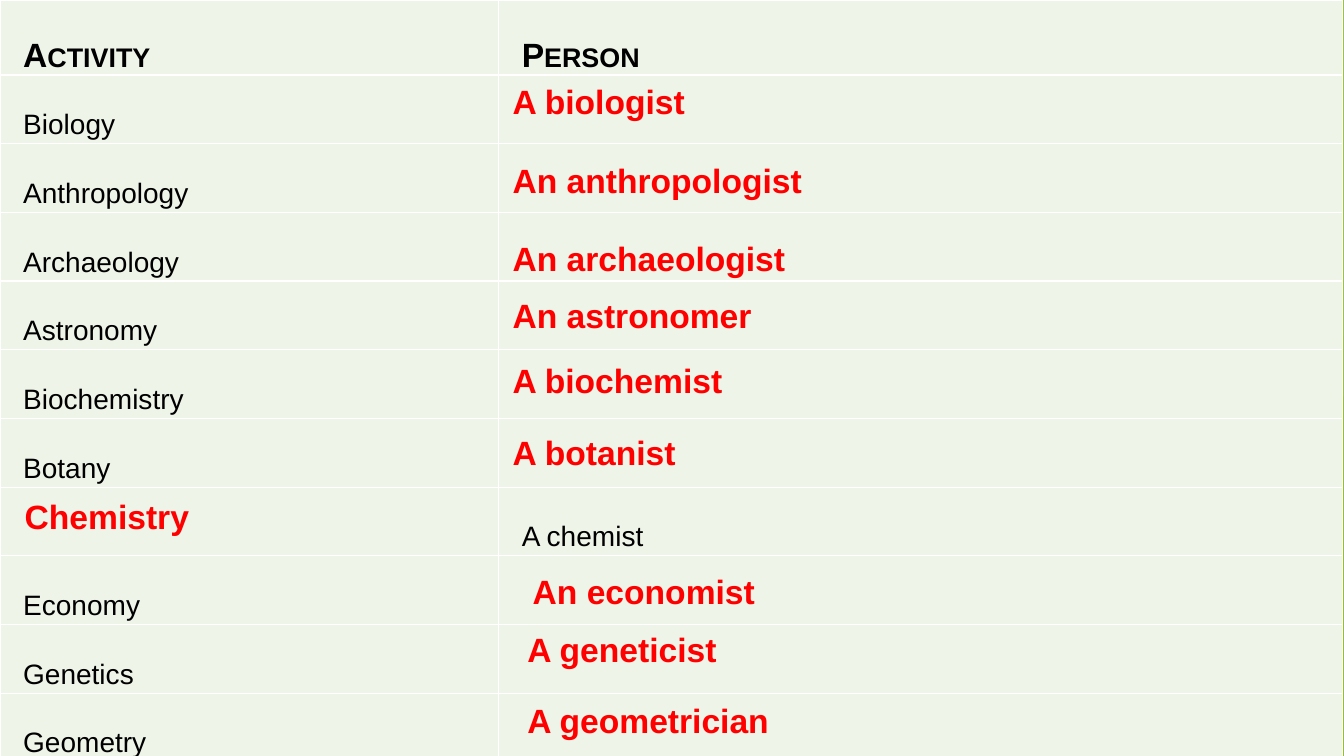
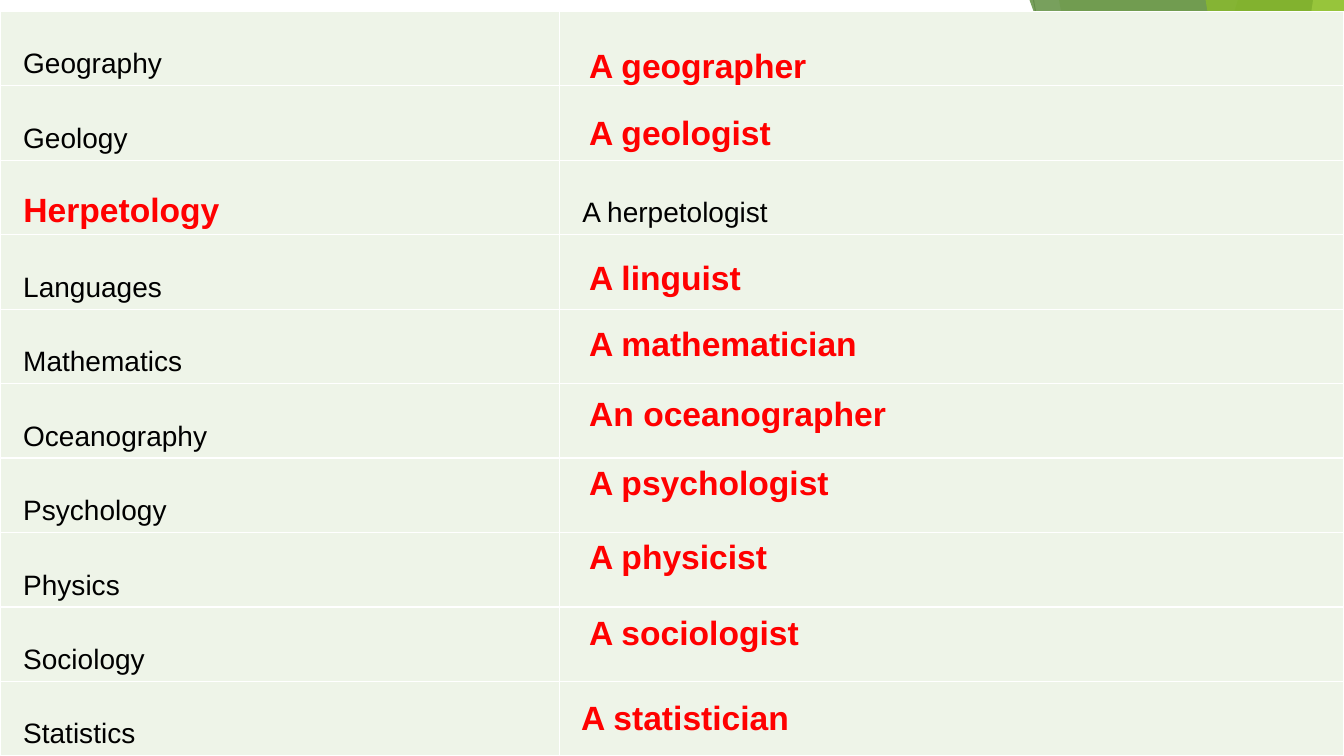
import pptx
import pptx.dml.color
import pptx.enum.shapes
import pptx.enum.text
import pptx.oxml
import pptx.oxml.ns
import pptx.util
from lxml import etree

COLORS = {
    "cell": "EEF4E8",
    "border": "FFFFFF",
    "word": "000000",
    "answer": "FF0000",
    "leaf": "90C226",
    "grass": "54A021",
    "forest": "3F7819",
    "lime": "C0E474",
    "ray": "BFBFBF",
    "pale_ray": "D9D9D9",
}
FONT = "Arial"
SLIDE_WIDTH = pptx.util.Inches(13.33)
SLIDE_HEIGHT = pptx.util.Inches(7.5)
ANSWER_WIDTH, ANSWER_HEIGHT = 33.8, 6.7

RAYS = [
    ((76.9, 0), (86.9, 100), "ray"),
    ((100, 53.7), (60.9, 100), "pale_ray"),
]
FACETS = [
    ("band", 92.1, 75.3, "leaf", 30),
    ("band", 78.8, 88.7, "leaf", 20),
    ("wedge", (73.3, 44.4, 26.7), 1, "grass", 72),
    ("band", 76.6, 96.8, "forest", 70),
    ("band", 97.7, 89.4, "lime", 70),
    ("band", 89.7, 98.9, "leaf", 65),
    ("wedge", (85.1, 52.4, 14.9), 1, "leaf", 80),
    ("wedge", (0, 58.5, 3.7), 0, "leaf", 85),
]

FIRST_WORDS = [
    ("Activity", "Person"), ("Biology", ""), ("Anthropology", ""),
    ("Archaeology", ""), ("Astronomy", ""), ("Biochemistry", ""),
    ("Botany", ""), ("", "A chemist"), ("Economy", ""),
    ("Genetics", ""), ("Geometry", ""),
]
FIRST_ANSWERS = [
    (37.4, [("A biologist", 10.1), ("An anthropologist", 20.5),
            ("An archaeologist", 30.8), ("An astronomer", 38.4),
            ("A biochemist", 46.9), ("A botanist", 56.5)]),
    (1.1, [("Chemistry", 64.9)]),
    (38.9, [("An economist", 74.9)]),
    (38.5, [("A geneticist", 82.5), ("A geometrician", 91.9)]),
]
SECOND_WORDS = [
    ("Geography", ""), ("Geology", ""), ("", "A herpetologist"),
    ("Languages", ""), ("Mathematics", ""), ("Oceanography", ""),
    ("Psychology", ""), ("Physics", ""), ("Sociology", ""),
    ("Statistics", ""),
]
SECOND_ANSWERS = [
    (43.1, [("A geographer", 5.3), ("A geologist", 14.1),
            ("A linguist", 33.3), ("A mathematician", 42),
            ("An oceanographer", 51.3), ("A psychologist", 60.4),
            ("A physicist", 70.3), ("A sociologist", 80.3)]),
    (1, [("Herpetology", 24.3)]),
    (42.5, [("A statistician", 91.5)]),
]


def across(percent):
    return round(SLIDE_WIDTH * percent / 100)


def down(percent):
    return round(SLIDE_HEIGHT * percent / 100)


def rgb(color):
    return pptx.dml.color.RGBColor.from_string(COLORS[color])


def add_xml(parent, tag, **attributes):
    return etree.SubElement(parent, pptx.oxml.ns.qn(tag), attributes)


def style_run(run, size, color, bold):
    run.font.name = FONT
    run.font.size = pptx.util.Pt(size)
    run.font.bold = bold
    run.font.color.rgb = rgb(color)


def add_ray(slide, start, end, color):
    ray = slide.shapes.add_connector(
        pptx.enum.shapes.MSO_CONNECTOR.STRAIGHT,
        across(start[0]), down(start[1]), across(end[0]), down(end[1]))
    ray.line.color.rgb = rgb(color)
    ray.line.width = pptx.util.Pt(0.75)
    add_xml(ray.element.spPr, "a:effectLst")


def tint(facet, color, opacity):
    facet.shadow.inherit = False
    facet.line.fill.background()
    facet.fill.solid()
    facet.fill.fore_color.rgb = rgb(color)
    tone = next(facet.element.spPr.iter(pptx.oxml.ns.qn("a:srgbClr")))
    add_xml(tone, "a:alpha", val=str(opacity * 1000))


def add_band(slide, top_left, bottom_left):
    outline = slide.shapes.build_freeform(across(top_left), 0)
    outline.add_line_segments([
        (across(100), 0), (across(100), down(100)),
        (across(bottom_left), down(100))], close=True)
    return outline.convert_to_shape()


def add_wedge(slide, place, peak):
    left, top, width = place
    wedge = slide.shapes.add_shape(
        pptx.enum.shapes.MSO_SHAPE.ISOSCELES_TRIANGLE,
        across(left), down(top), across(width), down(100 - top))
    wedge.adjustments[0] = peak
    return wedge


def add_backdrop(slide, layout):
    for start, end, color in RAYS:
        add_ray(slide, start, end, color)
    builders = {"band": add_band, "wedge": add_wedge}
    for kind, place, slant, color, opacity in FACETS:
        tint(builders[kind](slide, place, slant), color, opacity)
    for facet in list(slide.shapes):
        layout.shapes.element.append(facet.element)


def style_cell(cell):
    properties = cell._tc.get_or_add_tcPr()
    for side in ("a:lnL", "a:lnR", "a:lnT", "a:lnB"):
        border = add_xml(properties, side, w=str(pptx.util.Pt(1)))
        add_xml(add_xml(border, "a:solidFill"), "a:srgbClr", val=COLORS["border"])
    cell.fill.solid()
    cell.fill.fore_color.rgb = rgb("cell")


def write_word(cell, word, heading):
    cell.vertical_anchor = pptx.enum.text.MSO_ANCHOR.MIDDLE
    cell.margin_left = cell.margin_right = pptx.util.Inches(0.03)
    cell.margin_top = cell.margin_bottom = 0
    cell.text_frame.text = word
    entry = cell.text_frame.paragraphs[0]
    entry.line_spacing = 2.0
    indent = entry._p.get_or_add_pPr()
    indent.set("marL", str(pptx.util.Inches(0.2)))
    indent.set("indent", "0")
    style_run(entry.runs[0], 24 if heading else 20, "word", heading)
    if heading:
        entry.runs[0].font._element.set("cap", "small")
    else:
        entry.space_after = pptx.util.Pt(8)


def add_word_table(slide, words, top, column_shares, has_heading):
    height = down(100 - top)
    table = slide.shapes.add_table(
        len(words), len(column_shares), 0, down(top),
        across(sum(column_shares)), height).table
    table.first_row = has_heading
    table.horz_banding = False
    for column, share in zip(table.columns, column_shares):
        column.width = across(share)
    for row_number, (row, pair) in enumerate(zip(table.rows, words)):
        row.height = round(height / len(words))
        for cell, word in zip(row.cells, pair):
            style_cell(cell)
            if word:
                write_word(cell, word, has_heading and row_number == 0)


def add_answer(slide, answer, left, top):
    frame = slide.shapes.add_textbox(
        across(left), down(top), across(ANSWER_WIDTH), down(ANSWER_HEIGHT)).text_frame
    frame.word_wrap = True
    frame.auto_size = pptx.enum.text.MSO_AUTO_SIZE.SHAPE_TO_FIT_TEXT
    frame.text = answer
    style_run(frame.paragraphs[0].runs[0], 24, "answer", True)


def add_answers(slide, groups):
    for left, answers in groups:
        for answer, top in answers:
            add_answer(slide, answer, left, top)


def main():
    deck = pptx.Presentation()
    deck.slide_width = SLIDE_WIDTH
    deck.slide_height = SLIDE_HEIGHT
    blank = deck.slide_layouts[6]

    first = deck.slides.add_slide(blank)
    add_backdrop(first, blank)
    add_word_table(first, FIRST_WORDS, 0, (37.1, 62.8), True)
    add_answers(first, FIRST_ANSWERS)

    second = deck.slides.add_slide(blank)
    add_word_table(second, SECOND_WORDS, 1.5, (41.6, 58.4), False)
    add_answers(second, SECOND_ANSWERS)

    deck.save("out.pptx")


if __name__ == "__main__":
    main()
